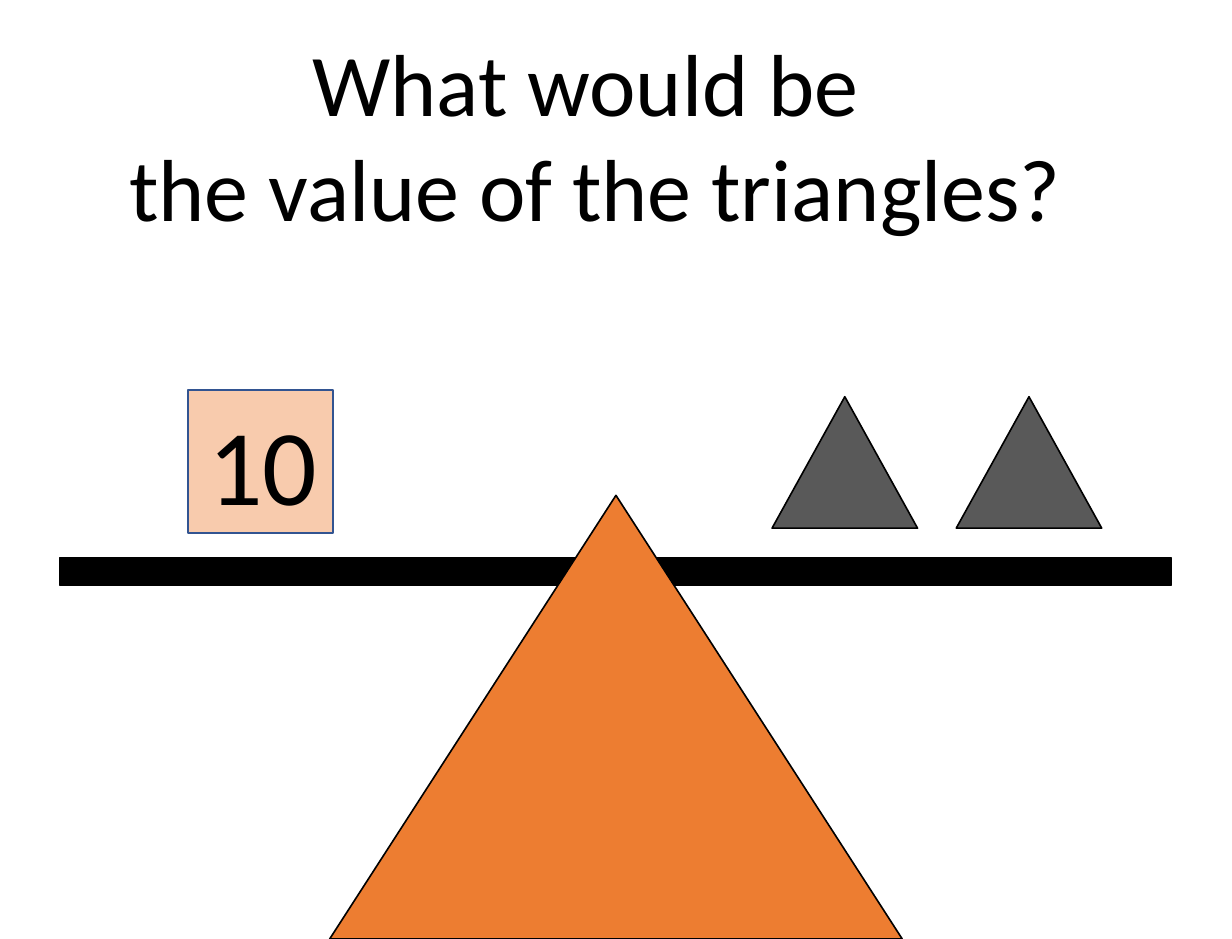
"""Build a balance puzzle slide, with places given in percent of the slide."""
from pptx import Presentation
from pptx.dml.color import RGBColor
from pptx.enum.shapes import MSO_SHAPE
from pptx.enum.text import MSO_AUTO_SIZE, PP_ALIGN
from pptx.util import Inches, Pt

RECT = MSO_SHAPE.RECTANGLE
TRIANGLE = MSO_SHAPE.ISOSCELES_TRIANGLE
CENTER = PP_ALIGN.CENTER
GROW = MSO_AUTO_SIZE.SHAPE_TO_FIT_TEXT

THEME = {
    "font": "Calibri", "title": 54, "number": 66, "line": 1,
    "ink": "000000", "stand": "ED7D31", "weight": "595959",
    "box": "F8CBAD", "edge": "325491",
}

deck = Presentation()
deck.slide_width, deck.slide_height = Inches(10.5), Inches(8)
slide = deck.slides.add_slide(deck.slide_layouts[6])
col, row = deck.slide_width / 100, deck.slide_height / 100


def place(x, y, wide, high):
    return int(x * col), int(y * row), int(wide * col), int(high * row)


def write(text, area, size, color="ink", align=CENTER):
    frame = slide.shapes.add_textbox(*place(*area)).text_frame
    frame.word_wrap = False
    frame.auto_size = GROW
    para = frame.paragraphs[0]
    para.text = text
    para.alignment = align
    for run in para.runs:
        run.font.name = THEME["font"]
        run.font.size = Pt(THEME[size])
        run.font.color.rgb = RGBColor.from_string(THEME[color])


side, gap = 11.81, 3.14
weights = [
    (TRIANGLE, (62.67 + i * (side + gap), 42.25, side, 14), "weight", "ink")
    for i in range(2)
]
parts = [
    (RECT, (4.86, 59.38, 90.19, 3), "ink", "ink"),
    (TRIANGLE, (26.76, 52.75, 46.48, 47.25), "stand", "ink"),
    *weights,
    (RECT, (15.24, 41.5, side, 15.25), "box", "edge"),
]
for kind, area, fill, line in parts:
    shape = slide.shapes.add_shape(kind, *place(*area))
    shape.shadow.inherit = False
    shape.fill.solid()
    shape.fill.fore_color.rgb = RGBColor.from_string(THEME[fill])
    shape.line.color.rgb = RGBColor.from_string(THEME[line])
    shape.line.width = Pt(THEME["line"])

write("10", (15.9, 41.75, 10.86, 15.12), size="number")
write("What would be \nthe value of the triangles?", (9.14, 2.38, 78.38, 24), size="title")

deck.save("out.pptx")
